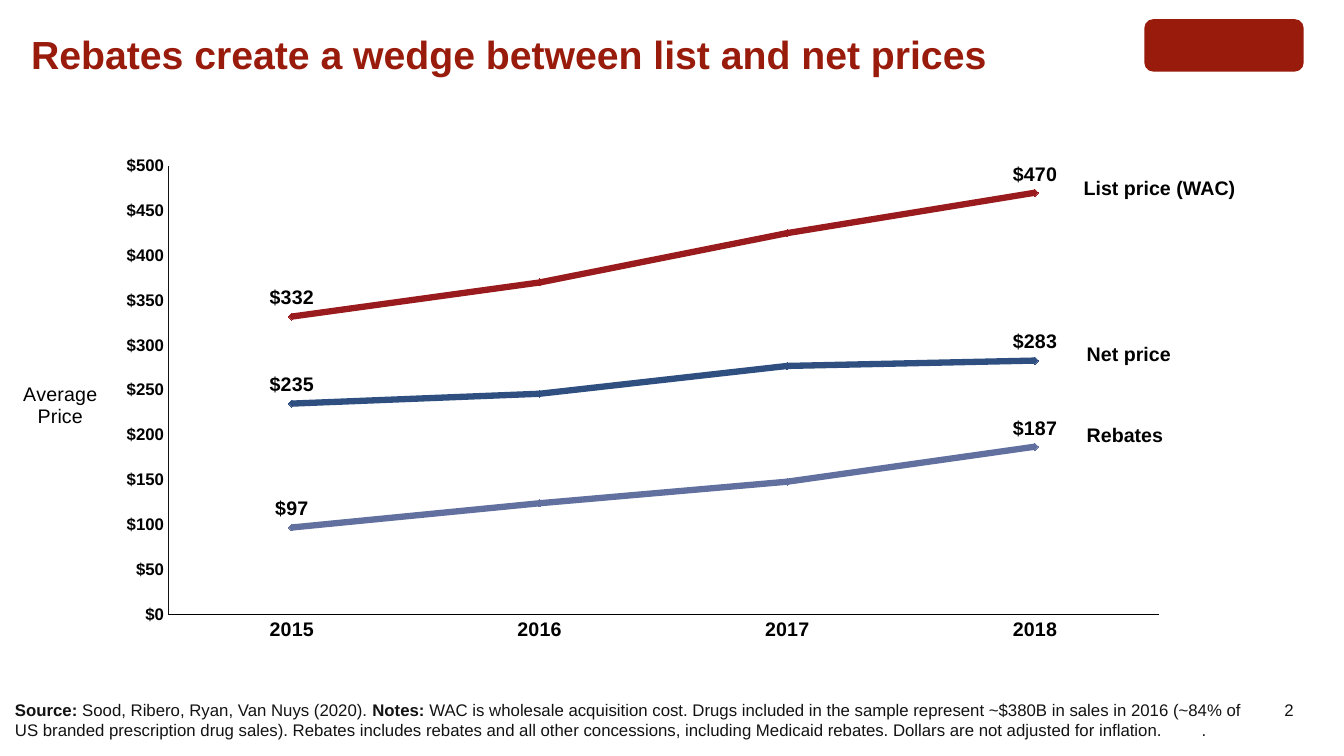
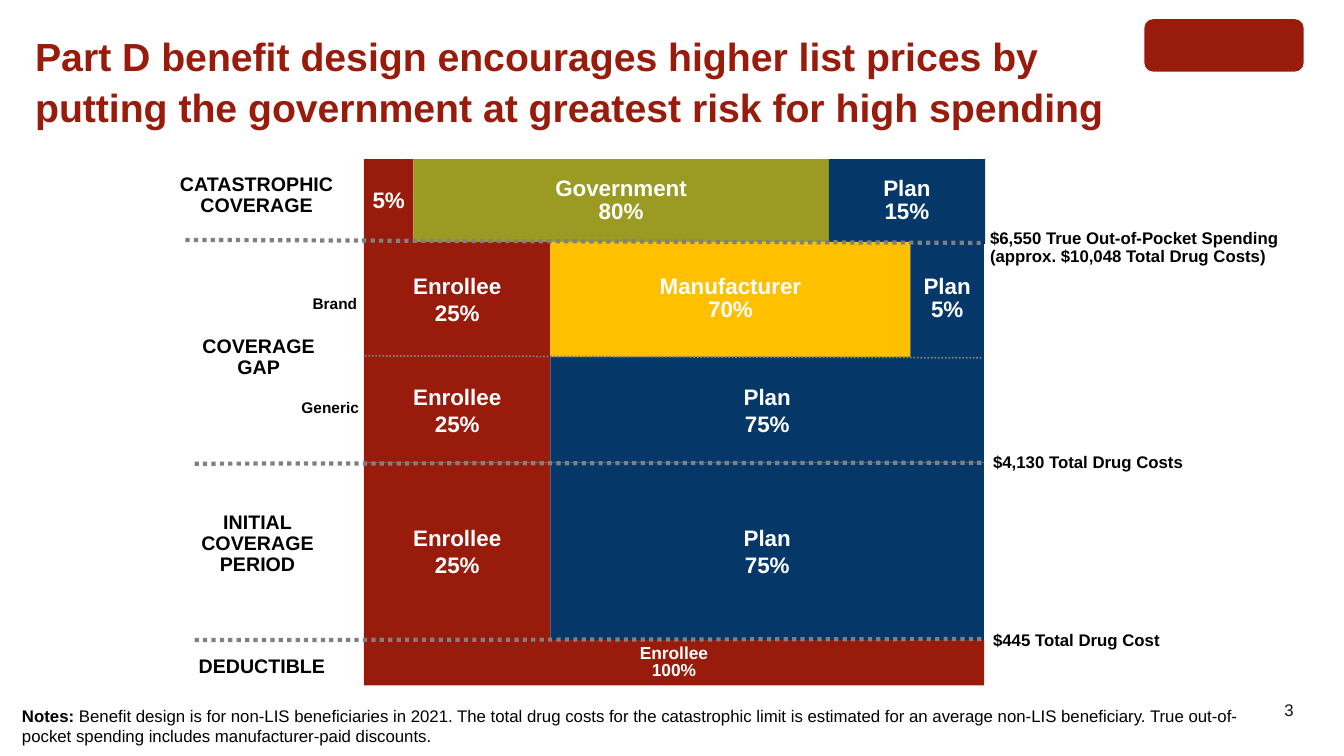
import pptx
import pptx.chart.data
import pptx.dml.color
import pptx.enum.chart
import pptx.enum.dml
import pptx.enum.shapes
import pptx.enum.text
import pptx.oxml
import pptx.oxml.ns
import pptx.util
from lxml import etree

Inches = pptx.util.Inches
Pt = pptx.util.Pt
RGBColor = pptx.dml.color.RGBColor
LEFT = pptx.enum.text.PP_ALIGN.LEFT
CENTER = pptx.enum.text.PP_ALIGN.CENTER
RIGHT = pptx.enum.text.PP_ALIGN.RIGHT
NO_TICK = pptx.enum.chart.XL_TICK_MARK.NONE
qn = pptx.oxml.ns.qn

# Shared style
FONT = "Arial"
RED = RGBColor(0x99, 0x1B, 0x0C)
NAVY = RGBColor(0x05, 0x37, 0x69)
OLIVE = RGBColor(0x9B, 0x9B, 0x23)
GOLD = RGBColor(0xFF, 0xC0, 0x00)
GRAY = RGBColor(0x80, 0x80, 0x80)
INK = RGBColor(0x14, 0x13, 0x13)
BLACK = RGBColor(0x00, 0x00, 0x00)
WHITE = RGBColor(0xFF, 0xFF, 0xFF)
LIST_RED = RGBColor(0x99, 0x1B, 0x1E)
NET_BLUE = RGBColor(0x2E, 0x4F, 0x7F)
REBATE_BLUE = RGBColor(0x61, 0x70, 0x9E)
WIDE = (0.1, 0.05)
TIGHT = (0.07, 0.04)


def write(frame, lines, size, color, align, space, inset):
    """Fill a frame; each line is a list of (text, bold) runs."""
    frame.margin_left = frame.margin_right = Inches(inset[0])
    frame.margin_top = frame.margin_bottom = Inches(inset[1])
    for i, runs in enumerate(lines):
        para = frame.paragraphs[0] if i == 0 else frame.add_paragraph()
        para.alignment = align
        if space:
            para.line_spacing = space
        for text, bold in runs:
            run = para.add_run()
            run.text = text
            run.font.name = FONT
            run.font.size = Pt(size)
            run.font.bold = bold
            run.font.color.rgb = color


def label(slide, at, lines, size, color=BLACK, align=LEFT, space=None, inset=WIDE):
    frame = slide.shapes.add_textbox(*map(Inches, at)).text_frame
    frame.word_wrap = True
    write(frame, lines, size, color, align, space, inset)
    return frame


deck = pptx.Presentation()
deck.slide_width = Inches(13.33)
deck.slide_height = Inches(7.5)

# Title, corner block and page number on every slide
titles = [
    ("Rebates create a wedge between list and net prices", (0.21, 0.22, 11.97, 0.49)),
    ("Part D benefit design encourages higher list prices by "
     "putting the government at greatest risk for high spending",
     (0.25, 0.24, 10.88, 0.49)),
]
for page, (title, at) in enumerate(titles, 2):
    slide = deck.slides.add_slide(deck.slide_layouts[6])
    label(slide, (12.06, 6.94, 0.77, 0.2), [[(str(page), False)]], 12, INK,
          RIGHT, inset=(0, 0))
    block = slide.shapes.add_shape(
        pptx.enum.shapes.MSO_SHAPE.ROUNDED_RECTANGLE,
        Inches(11.35), Inches(0.19), Inches(1.58), Inches(0.52))
    block.shadow.inherit = False
    block.fill.solid()
    block.fill.fore_color.rgb = RED
    block.line.fill.background()
    label(slide, at, [[(title, True)]], 28, RED, space=1.07)
trend, design = deck.slides

# Slide 1: price trend chart
lines = [
    ("List price (WAC)", (332, 370, 425, 470), LIST_RED, (10.65, 1.7)),
    ("Net price", (235, 246, 277, 283), NET_BLUE, (10.68, 3.34)),
    ("Rebates", (97, 124, 148, 187), REBATE_BLUE, (10.68, 4.15)),
]
data = pptx.chart.data.CategoryChartData()
data.categories = ["2015", "2016", "2017", "2018"]
for name, vals, color, spot in lines:
    data.add_series(name, vals)
chart = trend.shapes.add_chart(
    pptx.enum.chart.XL_CHART_TYPE.LINE_MARKERS,
    Inches(0), Inches(1.45), Inches(11.74), Inches(5.02), data).chart
chart.has_legend = False
chart.has_title = False
chart.font.name = FONT
chart.font.size = Pt(10)
chart.font.color.rgb = INK
chart.plots[0].vary_by_categories = False

# Axes
years, price = chart.category_axis, chart.value_axis
for axis, size, color in ((years, 14, BLACK), (price, 12, INK)):
    axis.has_major_gridlines = False
    axis.major_tick_mark = axis.minor_tick_mark = NO_TICK
    axis.format.line.color.rgb = color
    axis.format.line.width = Pt(0.75)
    font = axis.tick_labels.font
    font.name = FONT
    font.size = Pt(size)
    font.bold = True
    font.color.rgb = BLACK
price.minimum_scale = 0
price.maximum_scale = 500
price.major_unit = 50
price.tick_labels.number_format = '"$"#,##0'
price.tick_labels.number_format_is_linked = False
frame = price.axis_title.text_frame
for i, word in enumerate(("Average", "Price")):
    para = frame.paragraphs[0] if i == 0 else frame.add_paragraph()
    para.alignment = CENTER
    run = para.add_run()
    run.text = word
    run.font.name = FONT
    run.font.size = Pt(14)
    run.font.bold = False
    run.font.color.rgb = BLACK
body = price.axis_title._element.find(".//" + qn("a:bodyPr"))
body.set("rot", "0")
body.set("vert", "horz")

# Fixed places for the plot area and the axis title
places = [
    (chart._chartSpace.find(".//" + qn("c:plotArea")),
     {"layoutTarget": "inner", "xMode": "edge", "yMode": "edge",
      "x": 0.142, "y": 0.039, "w": 0.837, "h": 0.887}),
    (price.axis_title._element,
     {"xMode": "edge", "yMode": "edge", "x": 0.017, "y": 0.46}),
]
for owner, rule in places:
    layout = owner.find(qn("c:layout"))
    if layout is None:
        layout = etree.Element(qn("c:layout"))
        text = owner.find(qn("c:tx"))
        owner.insert(0 if text is None else owner.index(text) + 1, layout)
    for child in list(layout):
        layout.remove(child)
    manual = etree.SubElement(layout, qn("c:manualLayout"))
    for key, val in rule.items():
        etree.SubElement(manual, qn("c:" + key)).set("val", str(val))

# Series, with values on the first and last points only
for row, (name, vals, color, spot) in zip(chart.plots[0].series, lines):
    row.smooth = False
    row.format.line.color.rgb = color
    row.format.line.width = Pt(4.5)
    row.marker.style = pptx.enum.chart.XL_MARKER_STYLE.DIAMOND
    row.marker.size = 5
    row.marker.format.fill.solid()
    row.marker.format.fill.fore_color.rgb = color
    row.marker.format.line.color.rgb = color
    marks = row.data_labels
    marks.show_value = True
    marks.position = pptx.enum.chart.XL_LABEL_POSITION.ABOVE
    marks.number_format = '"$"#,##0'
    marks.number_format_is_linked = False
    marks.font.name = FONT
    marks.font.size = Pt(14)
    marks.font.bold = True
    marks.font.color.rgb = BLACK
    for point in (2, 1):
        mark = etree.Element(qn("c:dLbl"))
        etree.SubElement(mark, qn("c:idx")).set("val", str(point))
        etree.SubElement(mark, qn("c:delete")).set("val", "1")
        marks._element.insert(0, mark)
    label(trend, (*spot, 2.5, 0.34), [[(name, True)]], 14)

# Source note
note = label(trend, (0.05, 6.89, 12.54, 0.55), [[
    ("Source: ", True),
    ("Sood, Ribero, Ryan, Van Nuys (2020). ", False),
    ("Notes: ", True),
    ("WAC is wholesale acquisition cost. Drugs included in the sample represent "
     "~$380B in sales in 2016 (~84% of US branded prescription drug sales). "
     "Rebates includes rebates and all other concessions, including Medicaid "
     "rebates. Dollars are not adjusted for inflation.\t.", False),
]], 12, INK)
tabs = etree.SubElement(note.paragraphs[0]._p.get_or_add_pPr(), qn("a:tabLst"))
etree.SubElement(tabs, qn("a:tab"), pos=str(Inches(11.77)), algn="l")

# Slide 2: who pays in each phase
# top, height, line spacing, text size, [(payer, share, left, right, fill)]
tiers = [
    (1.58, 0.84, 0.85, 16, [("", "5%", 3.61, 4.1, RED),
                            ("Government", "80%", 4.1, 8.22, OLIVE),
                            ("Plan", "15%", 8.22, 9.77, NAVY)]),
    (2.4, 1.14, 0.85, 16, [("Enrollee", "25%", 3.61, 5.46, RED),
                           ("Manufacturer", "70%", 5.46, 9.03, GOLD),
                           ("Plan", "5%", 9.03, 9.76, NAVY)]),
    (3.54, 1.05, None, 16, [("Enrollee", "25%", 3.61, 5.46, RED),
                            ("Plan", "75%", 5.46, 9.76, NAVY)]),
    (4.59, 1.76, None, 16, [("Enrollee", "25%", 3.61, 5.46, RED),
                            ("Plan", "75%", 5.46, 9.76, NAVY)]),
    (6.35, 0.45, 0.8, 12.4, [("Enrollee", "100%", 3.61, 9.76, RED)]),
]
for top, high, space, size, parts in tiers:
    for payer, share, left, right, fill in parts:
        bar = design.shapes.add_shape(
            pptx.enum.shapes.MSO_SHAPE.RECTANGLE,
            Inches(left), Inches(top), Inches(right - left), Inches(high))
        bar.shadow.inherit = False
        bar.fill.solid()
        bar.fill.fore_color.rgb = fill
        bar.line.fill.background()
        frame = bar.text_frame
        frame.word_wrap = False
        frame.vertical_anchor = pptx.enum.text.MSO_ANCHOR.MIDDLE
        gap = None if payer == "Enrollee" and size == 16 else space
        write(frame, [[(text, True)] for text in (payer, share) if text],
              size, WHITE, CENTER, gap, TIGHT)

# Dotted phase limits
limits = [
    (1.84, 2.38, 9.76, 2.41, 3),
    (3.62, 3.53, 9.75, 3.55, 1.25),
    (1.93, 4.6, 9.76, 4.59, 3),
    (1.93, 6.35, 9.75, 6.34, 3),
]
for *ends, width in limits:
    limit = design.shapes.add_connector(
        pptx.enum.shapes.MSO_CONNECTOR.STRAIGHT, *map(Inches, ends))
    limit.line.color.rgb = GRAY
    limit.line.width = Pt(width)
    limit.line.dash_style = pptx.enum.dml.MSO_LINE.ROUND_DOT
    etree.SubElement(limit._element.spPr, qn("a:effectLst"))

# Phase names and spending limits
names = [
    ((1.65, 1.69, 1.79, 0.5), ["CATASTROPHIC", "COVERAGE"], 14, CENTER),
    ((1.84, 3.3, 1.45, 0.5), ["COVERAGE", "GAP"], 14, CENTER),
    ((1.69, 5.04, 1.73, 0.71), ["INITIAL", "COVERAGE", "PERIOD"], 14, CENTER),
    ((1.9, 6.47, 1.5, 0.28), ["DEDUCTIBLE"], 14, LEFT),
    ((3.03, 2.9, 0.65, 0.24), ["Brand"], 11, LEFT),
    ((2.92, 3.93, 0.79, 0.24), ["Generic"], 11, LEFT),
    ((9.75, 2.24, 3.13, 0.44),
     ["$6,550 True Out-of-Pocket Spending", "(approx. $10,048 Total Drug Costs)"],
     12, LEFT),
    ((9.78, 4.46, 2.76, 0.26), ["$4,130 Total Drug Costs"], 12, LEFT),
    ((9.78, 6.23, 2.3, 0.26), ["$445 Total Drug Cost"], 12, LEFT),
]
for at, words, size, align in names:
    label(design, at, [[(word, True)] for word in words], size, BLACK, align,
          0.9, TIGHT)

# Notes
label(design, (0.12, 6.95, 12.44, 0.5), [[
    ("Notes: ", True),
    ("Benefit design is for non-LIS beneficiaries in 2021. The total drug costs "
     "for the catastrophic limit is estimated for an average non-LIS beneficiary. "
     "True out-of-pocket spending includes manufacturer-paid discounts.", False),
]], 12)

deck.save("out.pptx")
